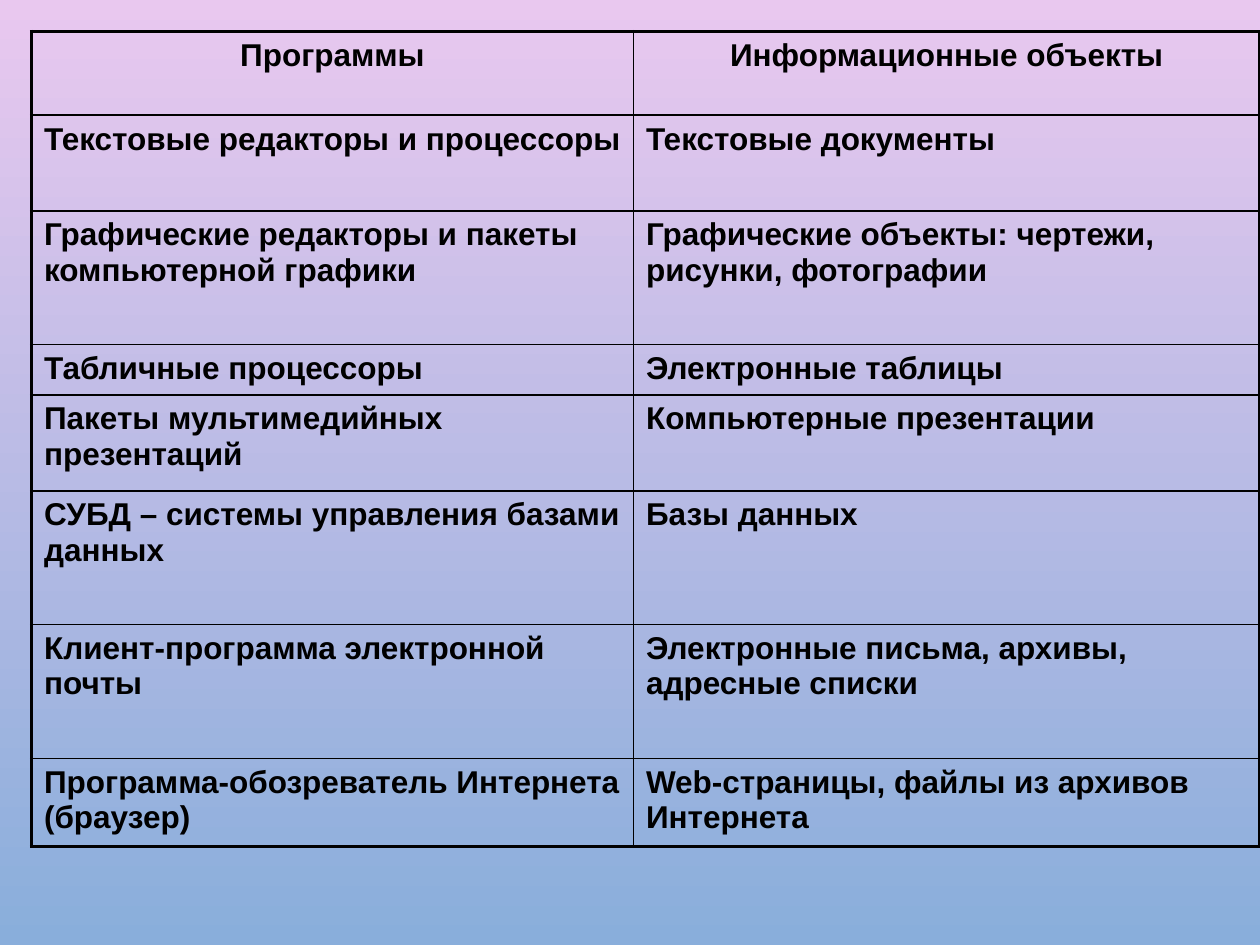
from lxml import etree
from pptx import Presentation
from pptx import util as u
from pptx.dml.color import RGBColor
from pptx.enum import text
from pptx.oxml import ns

PINK = RGBColor(0xE9, 0xC8, 0xEF)
BLUE = RGBColor(0x89, 0xAE, 0xDB)
BLACK = RGBColor(0, 0, 0)
THIN, THICK = u.Pt(1), u.Pt(2.25)


def border(cell, side, width):
    line = etree.SubElement(cell._tc.get_or_add_tcPr(), ns.qn("a:ln" + side), w=str(width))
    fill = etree.SubElement(line, ns.qn("a:solidFill"))
    etree.SubElement(fill, ns.qn("a:srgbClr"), val=str(BLACK))


deck = Presentation()
deck.slide_width, deck.slide_height = u.Pt(720), u.Pt(540)
slide = deck.slides.add_slide(deck.slide_layouts[6])

back = slide.background.fill
back.gradient()
back.gradient_angle = 270
for stop, color in zip(back.gradient_stops, (PINK, BLUE)):
    stop.color.rgb = color

rows = [
    (47.8, "Программы", "Информационные объекты"),
    (54.8, "Текстовые редакторы и процессоры", "Текстовые документы"),
    (76.4, "Графические редакторы и пакеты компьютерной графики",
     "Графические объекты: чертежи, рисунки, фотографии"),
    (28.8, "Табличные процессоры", "Электронные таблицы"),
    (54.8, "Пакеты мультимедийных презентаций", "Компьютерные презентации"),
    (76.4, "СУБД – системы управления базами данных", "Базы данных"),
    (76.4, "Клиент-программа электронной почты",
     "Электронные письма, архивы, адресные списки"),
    (50.4, "Программа-обозреватель Интернета (браузер)",
     "Web-страницы, файлы из архивов Интернета"),
]
widths = (344, 358)
last = len(rows) - 1
height = sum(row[0] for row in rows)

table = slide.shapes.add_table(
    len(rows), len(widths), u.Pt(18), u.Pt(18), u.Pt(sum(widths)), u.Pt(height)).table
table.first_row = table.horz_banding = False
for col, width in zip(table.columns, widths):
    col.width = u.Pt(width)

for r, (tall, *words) in enumerate(rows):
    table.rows[r].height = u.Pt(tall)
    for c, word in enumerate(words):
        cell = table.cell(r, c)
        edges = {"L": c == 0, "R": c == 1, "T": r == 0, "B": r == last}
        for side, outer in edges.items():
            border(cell, side, THICK if outer else THIN)
        cell.fill.background()
        cell.text_frame.text = word
        para = cell.text_frame.paragraphs[0]
        para.alignment = text.PP_ALIGN.CENTER if r == 0 else text.PP_ALIGN.LEFT
        font = para.runs[0].font
        font.name, font.size, font.bold = "Arial", u.Pt(18), True
        font.color.rgb = BLACK

deck.save("out.pptx")
